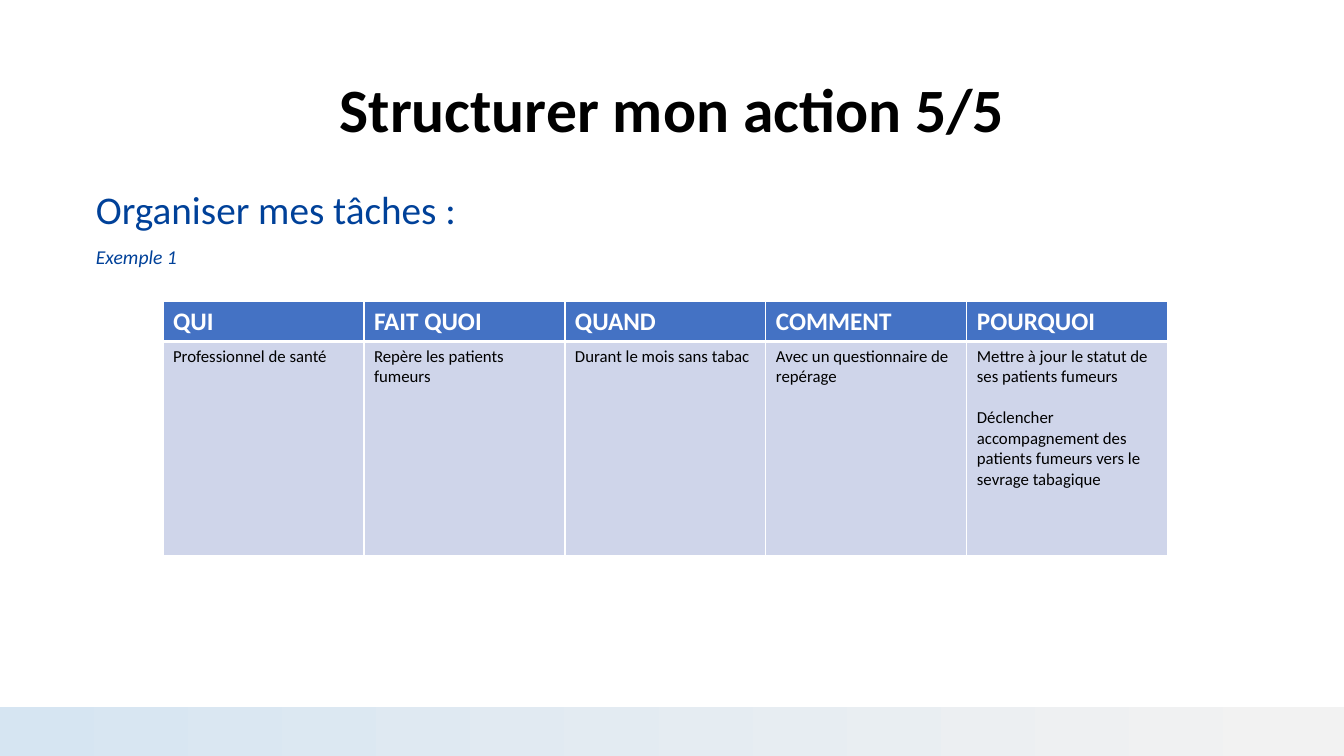
from dataclasses import dataclass

from lxml.etree import SubElement
from pptx import Presentation
from pptx.dml.color import RGBColor
from pptx.enum.shapes import MSO_SHAPE as Shape
from pptx.enum.text import MSO_ANCHOR as Anchor, PP_ALIGN as Align
from pptx.oxml.ns import qn
from pptx.util import Emu, Pt

PX = 914400 / 100.8
SLIDE_W, SLIDE_H = 1344, 756


@dataclass(frozen=True)
class Theme:
    font: str = "Calibri"
    black: str = "000000"
    white: str = "FFFFFF"
    blue: str = "004199"
    header: str = "4472C4"
    body: str = "CFD5EA"
    band_start: str = "D6E5F2"
    band_end: str = "F2F2F2"
    title_pt: int = 44
    heading_pt: int = 28
    header_pt: int = 18
    example_pt: int = 14
    cell_pt: int = 12


@dataclass(frozen=True)
class Column:
    heading: str
    details: tuple[str, ...]


THEME = Theme()
COLUMNS = (
    Column("QUI", ("Professionnel de santé",)),
    Column("FAIT QUOI", ("Repère les patients fumeurs",)),
    Column("QUAND", ("Durant le mois sans tabac",)),
    Column("COMMENT", ("Avec un questionnaire de repérage",)),
    Column("POURQUOI", (
        "Mettre à jour le statut de ses patients fumeurs",
        "Déclencher accompagnement des patients fumeurs vers le sevrage tabagique",
    )),
)


def px(*lengths: int) -> list[Emu]:
    return [Emu(round(length * PX)) for length in lengths]


def rgb(value: str) -> RGBColor:
    return RGBColor.from_string(value)


def write(frame, text: str, *, size: int, color: str, bold: bool = False,
          italic: bool = False, align=Align.LEFT, line: float = 1.0,
          before: float = 0) -> None:
    """Fill the first paragraph if it is empty, otherwise add one."""
    paragraph = frame.paragraphs[-1]
    if paragraph.runs:
        paragraph = frame.add_paragraph()
    paragraph.alignment = align
    paragraph.line_spacing = line
    paragraph.space_before = Pt(before)
    run = paragraph.add_run()
    run.text = text
    font = run.font
    font.name, font.size, font.bold, font.italic = THEME.font, Pt(size), bold, italic
    font.color.rgb = rgb(color)


def add_text_area(slide, box: tuple[int, int, int, int], anchor=Anchor.TOP):
    frame = slide.shapes.add_textbox(*px(*box)).text_frame
    frame.word_wrap = True
    frame.vertical_anchor = anchor
    return frame


def style_cell(cell, fill: str, bottom_pt: int = 1, top_pt: int = 1) -> None:
    properties = cell._tc.get_or_add_tcPr()
    for side, width in (("L", 1), ("R", 1), ("T", top_pt), ("B", bottom_pt)):
        border = SubElement(properties, qn(f"a:ln{side}"), w=str(Pt(width)))
        solid = SubElement(border, qn("a:solidFill"))
        SubElement(solid, qn("a:srgbClr"), val=THEME.white)
    cell.fill.solid()
    cell.fill.fore_color.rgb = rgb(fill)


def add_task_table(slide) -> None:
    left, top, column_w, row_heights = 163, 301, 201, (40, 214)
    width = column_w * len(COLUMNS)
    table = slide.shapes.add_table(
        len(row_heights), len(COLUMNS), *px(left, top, width, sum(row_heights))).table
    for row, height in zip(table.rows, px(*row_heights)):
        row.height = height
    for index, column in enumerate(COLUMNS):
        table.columns[index].width = px(column_w)[0]
        header, body = table.cell(0, index), table.cell(1, index)
        style_cell(header, THEME.header, bottom_pt=3)
        style_cell(body, THEME.body, top_pt=3)
        write(header.text_frame, column.heading, size=THEME.header_pt,
              color=THEME.white, bold=True)
        for number, detail in enumerate(column.details):
            write(body.text_frame, detail, size=THEME.cell_pt, color=THEME.black,
                  before=14.6 if number else 0)


def add_footer_band(slide) -> None:
    top = 707
    band = slide.shapes.add_shape(Shape.RECTANGLE, *px(0, top, SLIDE_W, SLIDE_H - top))
    band.shadow.inherit = False
    band.line.fill.background()
    band.fill.gradient()
    band.fill.gradient_angle = 0
    stops = ((0, THEME.band_start), (0.98, THEME.band_end))
    for stop, (position, color) in zip(band.fill.gradient_stops, stops):
        stop.position = position
        stop.color.rgb = rgb(color)


def main() -> None:
    deck = Presentation()
    deck.slide_width, deck.slide_height = px(SLIDE_W, SLIDE_H)
    slide = deck.slides.add_slide(deck.slide_layouts[6])

    # Title
    title = add_text_area(slide, (93, 40, 1159, 146), Anchor.MIDDLE)
    write(title, "Structurer mon action 5/5", size=THEME.title_pt, color=THEME.black,
          bold=True, align=Align.CENTER, line=0.9)

    # Introduction
    intro = add_text_area(slide, (86, 186, 1159, 480))
    write(intro, "Organiser mes tâches :", size=THEME.heading_pt, color=THEME.blue,
          line=0.9, before=10)
    write(intro, "Exemple 1", size=THEME.example_pt, color=THEME.blue, italic=True,
          line=0.9, before=10)

    # Footer and task table
    add_footer_band(slide)
    add_task_table(slide)

    deck.save("out.pptx")


if __name__ == "__main__":
    main()
